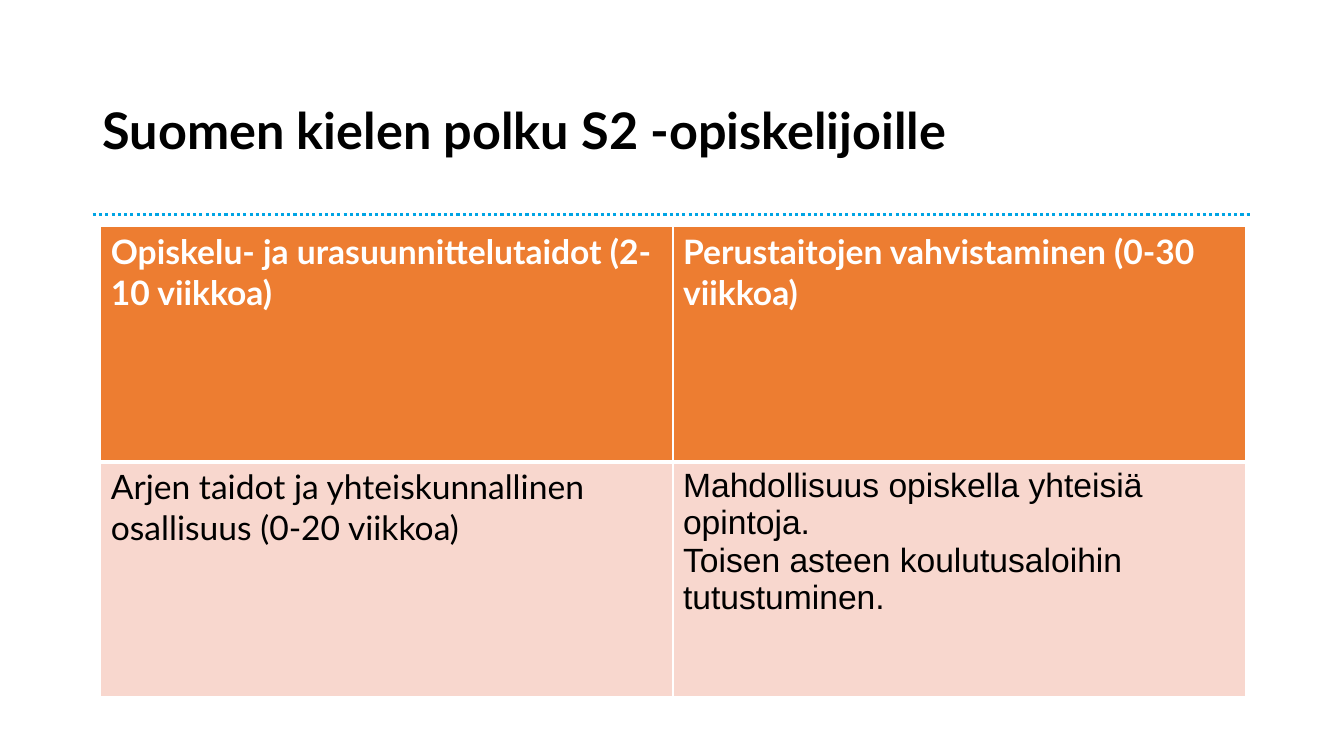
from lxml import etree
from pptx import Presentation, util as u
from pptx.dml.color import RGBColor
from pptx.enum import dml, shapes, text
from pptx.oxml import ns

WIDE, HIGH = 13.33, 7.5
LEFT, SPAN = 0.92, 11.5
FONT = "Lato"
BLACK, WHITE, BLUE = "000000", "FFFFFF", "00A4E4"
ORANGE, PINK = "ED7D31", "F8D7CE"

ROWS = [
    [["Opiskelu- ja urasuunnittelutaidot (2-10 viikkoa)"],
     ["Perustaitojen vahvistaminen (0-30 viikkoa)"]],
    [["Arjen taidot ja yhteiskunnallinen osallisuus (0-20 viikkoa)"],
     ["Mahdollisuus opiskella yhteisiä opintoja.",
      "Toisen asteen koulutusaloihin tutustuminen."]],
]


def paint(hue):
    return RGBColor.from_string(hue)


def write(frame, lines, size, hue, bold=False, face=FONT):
    for i, line in enumerate(lines):
        para = frame.paragraphs[0] if i == 0 else frame.add_paragraph()
        para.text = line
        font = para.font
        font.name, font.size, font.bold = face, u.Pt(size), bold
        font.color.rgb = paint(hue)


def add_title(slide, title):
    box = slide.shapes.add_textbox(*map(u.Inches, (LEFT, 0.6, SPAN, 1.45)))
    frame = box.text_frame
    frame.word_wrap = True
    frame.vertical_anchor = text.MSO_ANCHOR.MIDDLE
    write(frame, [title], 36, BLACK, True)
    frame.paragraphs[0].line_spacing = 0.9


def add_rule(slide, top):
    rule = slide.shapes.add_connector(
        shapes.MSO_CONNECTOR.STRAIGHT,
        *map(u.Inches, (LEFT, top, LEFT + SPAN, top)))
    rule.line.color.rgb = paint(BLUE)
    rule.line.width = u.Pt(2.25)
    rule.line.dash_style = dml.MSO_LINE.ROUND_DOT
    etree.SubElement(rule._element.spPr, ns.qn("a:effectLst"))


def edge(cell, sides):
    props = cell._tc.get_or_add_tcPr()
    for side, width in sides.items():
        line = etree.SubElement(props, ns.qn(f"a:ln{side}"), w=str(u.Pt(width)))
        fill = etree.SubElement(line, ns.qn("a:solidFill"))
        etree.SubElement(fill, ns.qn("a:srgbClr"), val=WHITE)


def add_grid(slide, rows):
    grid = slide.shapes.add_table(
        len(rows), len(rows[0]), *map(u.Inches, (1, 2.25, 11.35, 4.66))).table
    for r, row in enumerate(rows):
        head = r == 0
        for c, lines in enumerate(row):
            cell = grid.cell(r, c)
            # A thick line parts the head from the body
            edge(cell, {"L": 1, "R": 1, "T": 1 if head else 3,
                        "B": 3 if head else 1})
            cell.fill.solid()
            cell.fill.fore_color.rgb = paint(ORANGE if head else PINK)
            face = "Arial" if len(lines) > 1 else FONT
            write(cell.text_frame, lines, 24, WHITE if head else BLACK,
                  head, face)


def main():
    deck = Presentation()
    deck.slide_width, deck.slide_height = u.Inches(WIDE), u.Inches(HIGH)
    slide = deck.slides.add_slide(deck.slide_layouts[6])

    # Heading and dotted rule
    add_rule(slide, 2.13)
    add_title(slide, "Suomen kielen polku S2 -opiskelijoille")

    # Study path
    add_grid(slide, ROWS)
    deck.save("out.pptx")


if __name__ == "__main__":
    main()
